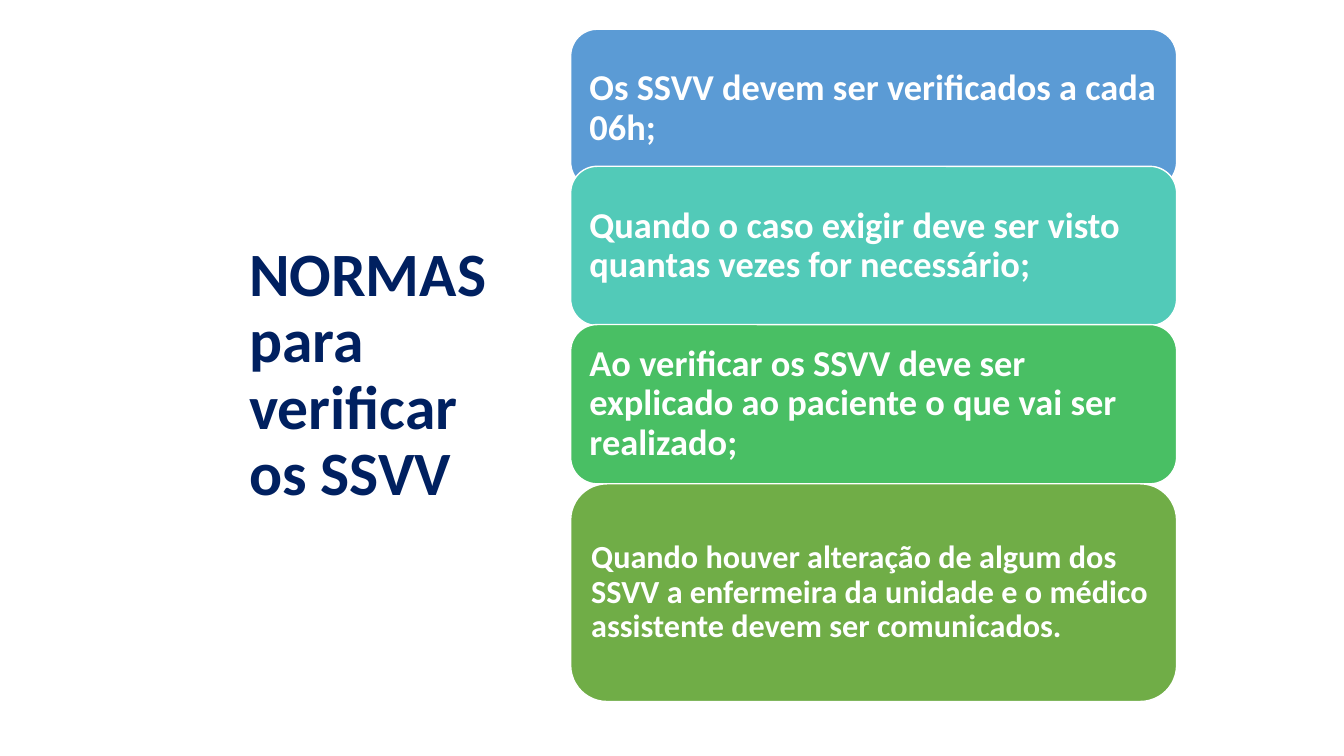
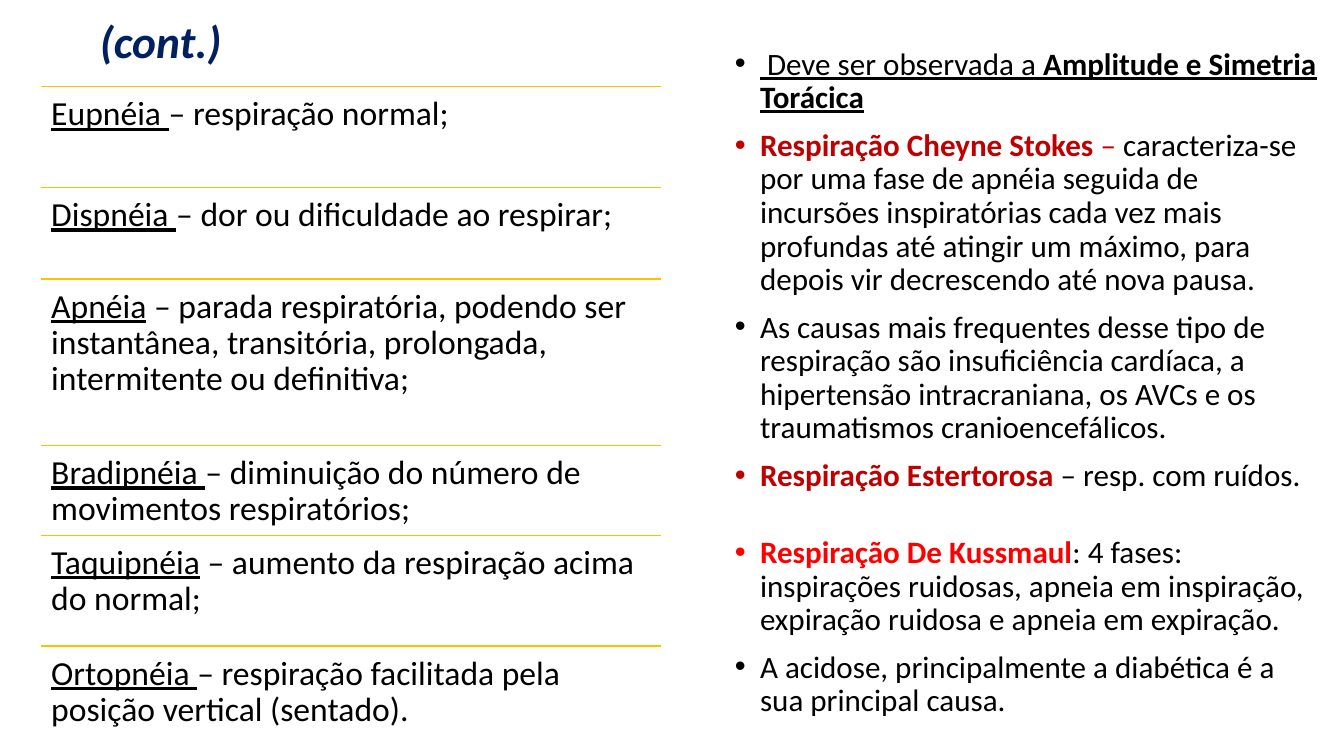
from dataclasses import dataclass

from lxml import etree
from pptx import Presentation
from pptx.dml.color import RGBColor
from pptx.enum.shapes import MSO_CONNECTOR, MSO_SHAPE
from pptx.enum.text import MSO_ANCHOR, MSO_AUTO_SIZE, PP_ALIGN
from pptx.oxml.ns import qn
from pptx.util import Emu, Pt

ROUNDED = MSO_SHAPE.ROUNDED_RECTANGLE
STRAIGHT = MSO_CONNECTOR.STRAIGHT
MIDDLE, TOP = MSO_ANCHOR.MIDDLE, MSO_ANCHOR.TOP
LEFT = PP_ALIGN.LEFT
NO_AUTOFIT = MSO_AUTO_SIZE.NONE
PX = Emu(9144)
TITLE_ONLY = 5


@dataclass(frozen=True)
class Theme:
    font: str = "Calibri"
    navy: str = "002060"
    white: str = "FFFFFF"
    black: str = "000000"
    gold: str = "FFC000"
    dark_red: str = "C00000"
    red: str = "FF0000"
    blue: str = "5B9BD5"
    teal: str = "52CAB8"
    emerald: str = "49BF64"
    green: str = "70AD47"
    title_size: float = 44
    small_title_size: float = 32.4
    card_size: float = 26
    small_card_size: float = 23
    term_size: float = 24
    bullet_size: float = 22.2
    line_spacing: float = 0.9


THEME = Theme()


def prepare_frame(shape, anchor, side_inset, top_inset):
    frame = shape.text_frame
    frame.word_wrap = True
    frame.auto_size = NO_AUTOFIT
    frame.vertical_anchor = anchor
    frame.margin_left = frame.margin_right = side_inset * PX
    frame.margin_top = frame.margin_bottom = top_inset * PX
    return frame


def style_paragraph(paragraph, size, color, bold=False, italic=False):
    paragraph.alignment = LEFT
    paragraph.line_spacing = THEME.line_spacing
    paragraph.font.name = THEME.font
    paragraph.font.size = Pt(size)
    paragraph.font.bold = bold
    paragraph.font.italic = italic
    paragraph.font.color.rgb = RGBColor.from_string(color)


presentation = Presentation()
presentation.slide_width = 1333 * PX
presentation.slide_height = 750 * PX

titles = [
    ("NORMAS\vpara verificar os SSVV", (237, 111, 280, 524), THEME.title_size, False),
    ("(cont.)", (89, 0, 228, 86), THEME.small_title_size, True),
]
slides = []
for text, box, size, italic in titles:
    slide = presentation.slides.add_slide(presentation.slide_layouts[TITLE_ONLY])
    title = slide.shapes.title
    title.left, title.top, title.width, title.height = [length * PX for length in box]
    frame = prepare_frame(title, MIDDLE, 10, 5)
    frame.text = text
    style_paragraph(frame.paragraphs[0], size, THEME.navy, bold=True, italic=italic)
    slides.append(slide)
rules_slide, breathing_slide = slides

cards = [
    (29, 158, THEME.blue, THEME.card_size, 11,
     "Os SSVV devem ser verificados a cada 06h;"),
    (165, 158, THEME.teal, THEME.card_size, 11,
     "Quando o caso exigir deve ser visto quantas vezes for necessário;"),
    (322, 158, THEME.emerald, THEME.card_size, 11,
     "Ao verificar os SSVV deve ser explicado ao paciente o que vai ser realizado;"),
    (480, 216, THEME.green, THEME.small_card_size, 10,
     "Quando houver alteração de algum dos SSVV a enfermeira da unidade "
     "e o médico assistente devem ser comunicados."),
]
for top, height, color, size, inset, text in cards:
    card = rules_slide.shapes.add_shape(ROUNDED, 566 * PX, top * PX, 601 * PX, height * PX)
    card.shadow.inherit = False
    card.fill.solid()
    card.fill.fore_color.rgb = RGBColor.from_string(color)
    card.line.color.rgb = RGBColor.from_string(THEME.white)
    card.line.width = Pt(1)
    frame = prepare_frame(card, MIDDLE, inset, inset)
    frame.text = text
    style_paragraph(frame.paragraphs[0], size, THEME.white, bold=True)

terms = [
    (100, "Eupnéia ", "– respiração normal;"),
    (91, "Dispnéia ", "– dor ou dificuldade ao respirar;"),
    (165, "Apnéia", " – parada respiratória, podendo ser instantânea, transitória, "
     "prolongada, intermitente ou definitiva;"),
    (89, "Bradipnéia ", "– diminuição do número de movimentos respiratórios;"),
    (110, "Taquipnéia", " – aumento da respiração acima do normal;"),
    (109, "Ortopnéia ", "– respiração facilitada pela posição vertical (sentado)."),
]
term_left, term_width, term_top = 41, 615, 86
for height, term, meaning in terms:
    divider = breathing_slide.shapes.add_connector(
        STRAIGHT, term_left * PX, term_top * PX,
        (term_left + term_width) * PX, term_top * PX)
    divider.line.color.rgb = RGBColor.from_string(THEME.gold)
    divider.line.width = Pt(1)
    etree.SubElement(divider.line._get_or_add_ln().getparent(), qn("a:effectLst"))
    box = breathing_slide.shapes.add_textbox(
        term_left * PX, term_top * PX, term_width * PX, height * PX)
    paragraph = prepare_frame(box, TOP, 10, 10).paragraphs[0]
    style_paragraph(paragraph, THEME.term_size, THEME.black)
    for text, underline in ((term, True), (meaning, False)):
        run = paragraph.add_run()
        run.text = text
        run.font.underline = underline
    term_top += height

bullets = [
    (0, True, [(" Deve ser observada a ", THEME.black, False),
               ("Amplitude e Simetria Torácica", THEME.black, True)]),
    (10, False, [("Respiração Cheyne Stokes ", THEME.dark_red, True),
                 ("– ", THEME.dark_red, False),
                 ("caracteriza-se por uma fase de apnéia seguida de incursões "
                  "inspiratórias cada vez mais profundas até atingir um máximo, "
                  "para depois vir decrescendo até nova pausa.", THEME.black, False)]),
    (10, False, [("As causas mais frequentes desse tipo de respiração são insuficiência "
                  "cardíaca, a hipertensão intracraniana, os AVCs e os traumatismos "
                  "cranioencefálicos.", THEME.black, False)]),
    (10, False, [("Respiração Estertorosa ", THEME.dark_red, True),
                 ("– resp. com ruídos.", THEME.black, False)]),
    (31, False, [("Respiração De Kussmaul", THEME.red, True),
                 (": 4 fases: inspirações ruidosas, apneia em inspiração, expiração "
                  "ruidosa e apneia em expiração.", THEME.black, False)]),
    (10, False, [("A acidose, principalmente a diabética é a sua principal causa.",
                  THEME.black, False)]),
]
box = breathing_slide.shapes.add_textbox(719 * PX, 43 * PX, 600 * PX, 685 * PX)
frame = prepare_frame(box, TOP, 10, 5)
for index, (space_before, underline, runs) in enumerate(bullets):
    paragraph = frame.add_paragraph() if index else frame.paragraphs[0]
    properties = paragraph._p.get_or_add_pPr()
    properties.set("marL", str(25 * PX))
    properties.set("indent", str(-25 * PX))
    bullet_color = etree.SubElement(properties, qn("a:buClr"))
    etree.SubElement(bullet_color, qn("a:srgbClr"), val=runs[0][1])
    etree.SubElement(properties, qn("a:buFont"), typeface="Arial")
    etree.SubElement(properties, qn("a:buChar"), char="•")
    style_paragraph(paragraph, THEME.bullet_size, THEME.black)
    paragraph.space_before = Pt(space_before)
    paragraph.font.underline = underline
    for text, color, bold in runs:
        run = paragraph.add_run()
        run.text = text
        run.font.bold = bold
        run.font.color.rgb = RGBColor.from_string(color)

presentation.save("out.pptx")
